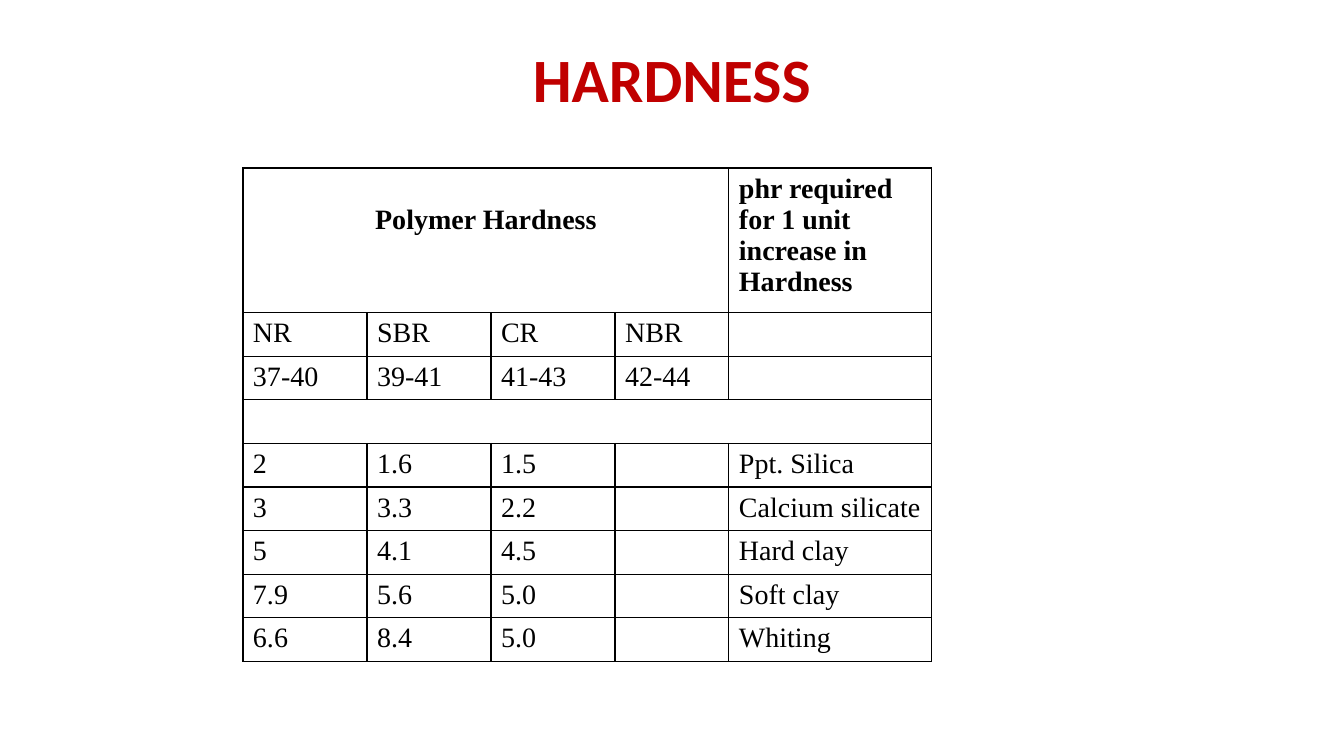
"""Build the slide that tabulates polymer hardness and filler loading."""
from dataclasses import dataclass

from lxml.etree import SubElement
from pptx import Presentation
from pptx.dml.color import RGBColor as Rgb
from pptx.enum.text import MSO_ANCHOR as Anchor, PP_ALIGN as Align
from pptx.oxml.ns import qn
from pptx.slide import Slide
from pptx.table import Table, _Cell as Cell
from pptx.util import Pt


@dataclass(frozen=True)
class Theme:
    title_font: str = "Calibri"
    body_font: str = "Times New Roman"
    title_size: float = 44
    body_size: float = 20
    border_width: float = 1
    heading: str = "C00000"
    ink: str = "000000"


@dataclass(frozen=True)
class HardnessRow:
    values: tuple[str, ...]
    height: float = 31.15
    bold: bool = False
    merged: int = 1


THEME = Theme()
COLUMN_WIDTHS = (88.6, 88.6, 88.6, 81.4, 145)
ROWS = (
    HardnessRow(
        ("Polymer Hardness", "", "", "", "phr required for 1 unit increase in Hardness"),
        height=103.4, bold=True, merged=4,
    ),
    HardnessRow(("NR", "SBR", "CR", "NBR", "")),
    HardnessRow(("37-40", "39-41", "41-43", "42-44", "")),
    HardnessRow(("", "", "", "", ""), merged=5),
    HardnessRow(("2", "1.6", "1.5", "", "Ppt. Silica")),
    HardnessRow(("3", "3.3", "2.2", "", "Calcium silicate")),
    HardnessRow(("5", "4.1", "4.5", "", "Hard clay")),
    HardnessRow(("7.9", "5.6", "5.0", "", "Soft clay")),
    HardnessRow(("6.6", "8.4", "5.0", "", "Whiting")),
)


def add_heading(slide: Slide) -> None:
    heading = slide.shapes.title
    heading.left, heading.top = Pt(66), Pt(28.8)
    heading.width, heading.height = Pt(828), Pt(60.5)
    frame = heading.text_frame
    frame.text = "HARDNESS"
    frame.vertical_anchor = Anchor.MIDDLE
    paragraph = frame.paragraphs[0]
    paragraph.alignment = Align.CENTER
    paragraph.line_spacing = 0.9
    font = paragraph.runs[0].font
    font.name, font.size, font.bold = THEME.title_font, Pt(THEME.title_size), True
    font.color.rgb = Rgb.from_string(THEME.heading)


def frame_cell(cell: Cell) -> None:
    properties = cell._tc.get_or_add_tcPr()
    for side in ("a:lnL", "a:lnR", "a:lnT", "a:lnB"):
        border = SubElement(properties, qn(side), w=str(Pt(THEME.border_width)))
        ink = SubElement(border, qn("a:solidFill"))
        SubElement(ink, qn("a:srgbClr"), val=THEME.ink)
    cell.fill.background()


def write_cell(cell: Cell, value: str, bold: bool) -> None:
    cell.text_frame.text = value
    for run in cell.text_frame.paragraphs[0].runs:
        font = run.font
        font.name, font.size, font.bold = THEME.body_font, Pt(THEME.body_size), bold
        font.color.rgb = Rgb.from_string(THEME.ink)


def fill_row(table: Table, index: int, row: HardnessRow) -> None:
    table.rows[index].height = Pt(row.height)
    for column, value in enumerate(row.values):
        cell = table.cell(index, column)
        frame_cell(cell)
        write_cell(cell, value, row.bold)
    if row.merged > 1:
        table.cell(index, 0).merge(table.cell(index, row.merged - 1))


def add_hardness_table(slide: Slide) -> None:
    table = slide.shapes.add_table(
        len(ROWS), len(COLUMN_WIDTHS), Pt(173.5), Pt(120),
        Pt(sum(COLUMN_WIDTHS)), Pt(sum(row.height for row in ROWS)),
    ).table
    table.first_row = table.horz_banding = False
    for column, width in zip(table.columns, COLUMN_WIDTHS):
        column.width = Pt(width)
    for index, row in enumerate(ROWS):
        fill_row(table, index, row)
    polymer_header = table.cell(0, 0)
    polymer_header.margin_top = Pt(26)
    polymer_header.text_frame.paragraphs[0].alignment = Align.CENTER


def main() -> None:
    presentation = Presentation()
    presentation.slide_width, presentation.slide_height = Pt(960), Pt(540)
    slide = presentation.slides.add_slide(presentation.slide_layouts[5])
    add_heading(slide)
    add_hardness_table(slide)
    presentation.save("out.pptx")


if __name__ == "__main__":
    main()
